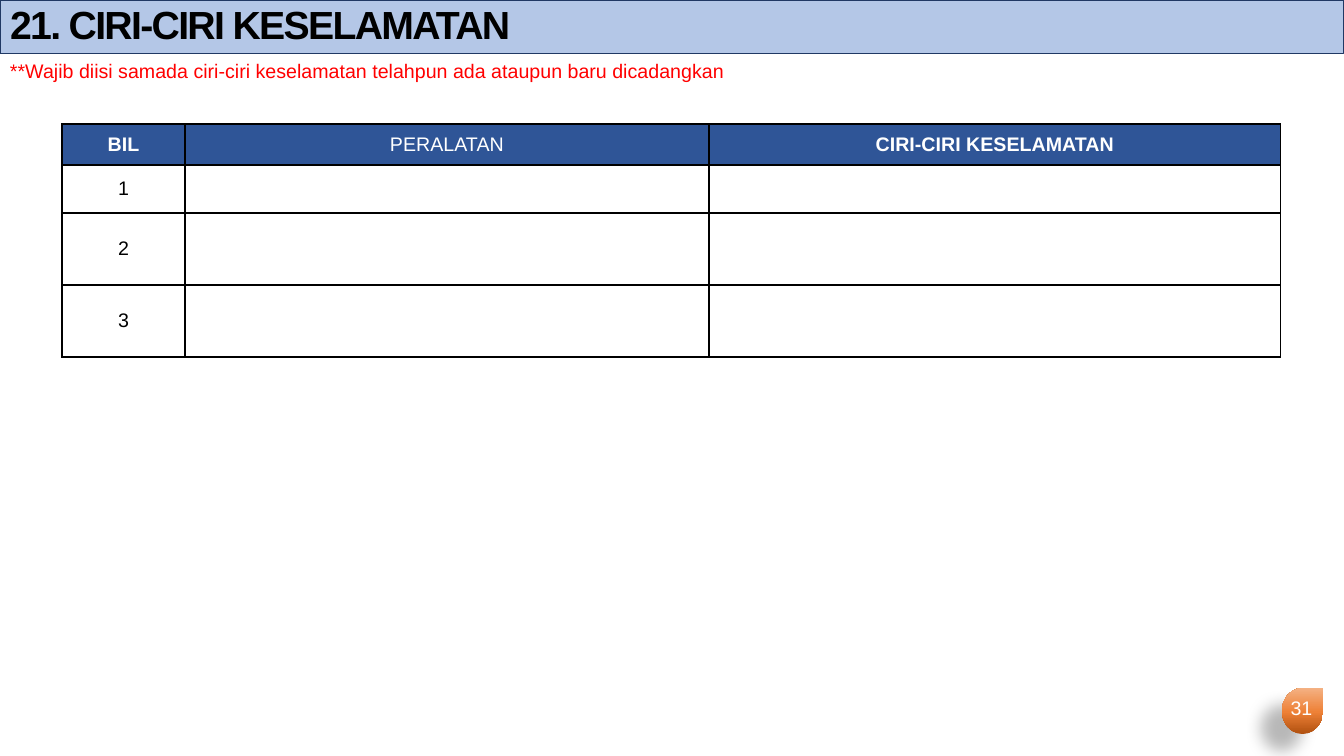
import pptx
import pptx.dml.color
import pptx.enum.shapes
import pptx.enum.text
import pptx.oxml
import pptx.oxml.ns
import pptx.util

ALIGN = pptx.enum.text.PP_ALIGN
ANCHOR = pptx.enum.text.MSO_ANCHOR
NAMESPACE = pptx.oxml.ns.nsdecls("a")


def px(length):
    return pptx.util.Emu(round(length * 914400 / 100.8))


def color(value):
    return pptx.dml.color.RGBColor.from_string(value)


def write(frame, text, size=14, fill="000000", bold=False, align=ALIGN.LEFT,
          anchor=ANCHOR.TOP, line_spacing=None, tracking=None):
    frame.word_wrap = True
    frame.vertical_anchor = anchor
    paragraph = frame.paragraphs[0]
    paragraph.alignment = align
    paragraph.line_spacing = line_spacing
    run = paragraph.add_run()
    run.text = text
    run.font.name = "Arial"
    run.font.size = pptx.util.Pt(size)
    run.font.bold = bold
    run.font.color.rgb = color(fill)
    if tracking is not None:
        run.font._element.set("spc", str(round(tracking * 100)))


class SlideBuilder:
    band = "B4C7E7"
    band_line = "203864"
    header = "2F5597"
    border = "000000"
    badge_stops = [(0, "B0500F"), (48, "EE8137"), (100, "F4B183")]

    def __init__(self, presentation):
        self.slide = presentation.slides.add_slide(presentation.slide_layouts[5])

    def title(self, text, left, top, width, height):
        shape = self.slide.shapes.title
        shape.left, shape.top, shape.width, shape.height = map(px, (left, top, width, height))
        shape.fill.solid()
        shape.fill.fore_color.rgb = color(self.band)
        shape.line.color.rgb = color(self.band_line)
        shape.line.width = pptx.util.Pt(0.75)
        shape.text_frame.auto_size = pptx.enum.text.MSO_AUTO_SIZE.NONE
        write(shape.text_frame, text, size=28, bold=True, anchor=ANCHOR.MIDDLE,
              line_spacing=0.9, tracking=-1.2)

    def text(self, text, left, top, width, height, **style):
        box = self.slide.shapes.add_textbox(*map(px, (left, top, width, height)))
        write(box.text_frame, text, **style)

    def badge(self, left, top, width, height):
        shape = self.slide.shapes.add_shape(
            pptx.enum.shapes.MSO_SHAPE.TEAR, *map(px, (left, top, width, height)))
        shape.line.fill.background()
        shape.fill.gradient()
        shape.fill.gradient_angle = 90
        properties = shape._element.spPr
        stops = properties.find(".//" + pptx.oxml.ns.qn("a:gsLst"))
        stops.clear()
        for position, value in self.badge_stops:
            stops.append(pptx.oxml.parse_xml(
                f'<a:gs {NAMESPACE} pos="{position * 1000}"><a:srgbClr val="{value}"/></a:gs>'))
        shape.shadow.inherit = False
        effects = properties.find(pptx.oxml.ns.qn("a:effectLst"))
        effects.append(pptx.oxml.parse_xml(
            f'<a:outerShdw {NAMESPACE} blurRad="{pptx.util.Pt(11.8)}" '
            f'dist="{pptx.util.Pt(19.7)}" dir="{141 * 60000}" rotWithShape="0">'
            '<a:srgbClr val="000000"><a:alpha val="28000"/></a:srgbClr></a:outerShdw>'))

    def table(self, rows, left, top, widths, heights, header_bold):
        table = self.slide.shapes.add_table(
            len(heights), len(widths),
            *map(px, (left, top, sum(widths), sum(heights)))).table
        for column, width in zip(table.columns, widths):
            column.width = px(width)
        for row, height in zip(table.rows, heights):
            row.height = px(height)
        for row_index, row in enumerate(rows):
            for column_index, text in enumerate(row):
                self.cell(table.cell(row_index, column_index), text, row_index == 0,
                          row_index == 0 and header_bold[column_index])

    def cell(self, cell, text, is_header, bold):
        cell.margin_left = cell.margin_right = px(7)
        cell.margin_top = cell.margin_bottom = px(4)
        cell.vertical_anchor = ANCHOR.MIDDLE
        properties = cell._tc.get_or_add_tcPr()
        for side in ("lnL", "lnR", "lnT", "lnB"):
            properties.append(pptx.oxml.parse_xml(
                f'<a:{side} {NAMESPACE} w="{pptx.util.Pt(1)}"><a:solidFill>'
                f'<a:srgbClr val="{self.border}"/></a:solidFill></a:{side}>'))
        if is_header:
            cell.fill.solid()
            cell.fill.fore_color.rgb = color(self.header)
        else:
            cell.fill.background()
        if text:
            write(cell.text_frame, text, fill="FFFFFF" if is_header else "000000",
                  bold=bold, align=ALIGN.CENTER, anchor=ANCHOR.MIDDLE)


def main():
    presentation = pptx.Presentation()
    presentation.slide_width = px(1344)
    presentation.slide_height = px(756)
    builder = SlideBuilder(presentation)
    builder.title("21. CIRI-CIRI KESELAMATAN", 0, 0, 1344, 54)
    builder.text("**Wajib diisi samada ciri-ciri keselamatan telahpun ada ataupun baru dicadangkan",
                 0, 54, 947, 34, fill="FF0000")
    rows = [("BIL", "PERALATAN", "CIRI-CIRI KESELAMATAN")]
    rows += [(str(number), "", "") for number in range(1, 4)]
    builder.table(rows, 62, 124, widths=(123, 524, 572), heights=(41, 48, 72, 72),
                  header_bold=(True, False, True))
    builder.badge(1282, 688, 41, 46)
    builder.text("31", 1277, 691, 49, 40, fill="FFFFFF", align=ALIGN.CENTER)
    presentation.save("out.pptx")


if __name__ == "__main__":
    main()
